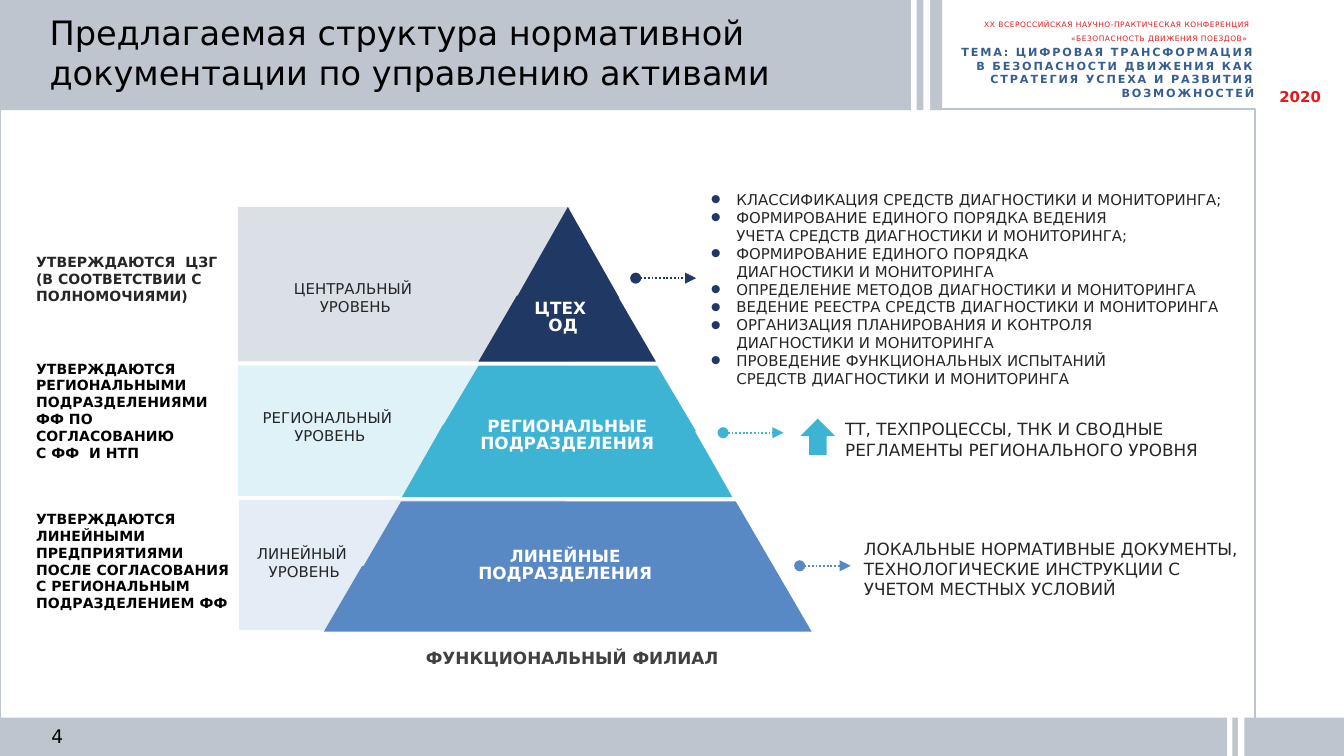
from copy import deepcopy

from lxml import etree
from pptx import Presentation
from pptx.dml.color import RGBColor
from pptx.enum.dml import MSO_LINE
from pptx.enum.shapes import MSO_CONNECTOR, MSO_SHAPE
from pptx.enum.text import MSO_ANCHOR, MSO_AUTO_SIZE, PP_ALIGN
from pptx.oxml.ns import qn
from pptx.util import Inches, Pt

RECTANGLE, ROUNDED = MSO_SHAPE.RECTANGLE, MSO_SHAPE.ROUNDED_RECTANGLE
TRAPEZOID = MSO_SHAPE.TRAPEZOID
RIGHT_ARROW = MSO_SHAPE.RIGHT_ARROW
STRAIGHT = MSO_CONNECTOR.STRAIGHT
DOTTED = MSO_LINE.ROUND_DOT
LEFT, CENTER, RIGHT = PP_ALIGN.LEFT, PP_ALIGN.CENTER, PP_ALIGN.RIGHT
TOP, MIDDLE = MSO_ANCHOR.TOP, MSO_ANCHOR.MIDDLE
FIT_SHAPE = MSO_AUTO_SIZE.SHAPE_TO_FIT_TEXT

FONT = "DejaVu Sans"
COLORS = {
    "frame": "BFC5CE", "white": "FFFFFF", "black": "000000",
    "text": "262626", "caption": "404040", "red": "E21A1A", "theme": "365F91",
    "central": "203864", "regional": "3EB4D4", "linear": "5889C4",
}

# The slide is a grid of square cells, 100 columns by 56.25 rows
CELL = Inches(0.1)
COLUMNS, ROWS = 100, 56.25

# Each pyramid level: pale band, two tiers (box, slope), arrow, plate, three texts
LEVELS = [
    {"color": "central", "band": (17.7, 15.4, 24.7, 11.5),
     "tiers": [((38.4, 15.4, 7.7, 6.8), 0.583), ((35.6, 22, 13.2, 4.9), 0.583)],
     "arrow": (47.3, 51.8, 20.7), "plate": None,
     "unit": ("ЦТЕХ \nОД", (36.5, 21.9, 10.8, 4.2)),
     "name": ("ЦЕНТРАЛЬНЫЙ ", (16.9, 20.3, 19.1, 3.9)),
     "approval": (["УТВЕРЖДАЮТСЯ  ЦЗГ", "(В СООТВЕТСТВИИ С ПОЛНОМОЧИЯМИ)"],
                  (1.7, 18.4, 15.6, 4.8), "text")},
    {"color": "regional", "band": (17.7, 27.2, 24.3, 9.7),
     "tiers": [((32.7, 27.2, 19.1, 4.9), 0.594), ((29.9, 31.6, 24.6, 5.4), 0.568)],
     "arrow": (53.8, 58.3, 32.2), "plate": (34.5, 30.7, 15.3, 4.3),
     "unit": ("РЕГИОНАЛЬНЫЕ ПОДРАЗДЕЛЕНИЯ", (33.6, 30.7, 17.2, 3.8)),
     "name": ("РЕГИОНАЛЬНЫЙ ", (16.9, 29.9, 15.3, 3.9)),
     "approval": (["УТВЕРЖДАЮТСЯ РЕГИОНАЛЬНЫМИ ПОДРАЗДЕЛЕНИЯМИ ФФ ПО "
                   "СОГЛАСОВАНИЮ \nС ФФ  И НТП"], (1.7, 26.3, 15.9, 8.6), "black")},
    {"color": "linear", "band": (17.8, 37.2, 24.3, 9.7),
     "tiers": [((27, 37.3, 30.6, 4.9), 0.583), ((24.1, 42.1, 36.3, 4.9), 0.583)],
     "arrow": (59.5, 63.3, 42.1), "plate": (34.5, 40.4, 15.3, 4.3),
     "unit": ("ЛИНЕЙНЫЕ ПОДРАЗДЕЛЕНИЯ", (32.5, 40.4, 19.1, 4)),
     "name": ("ЛИНЕЙНЫЙ ", (16.5, 40, 12.3, 3.9)),
     "approval": (["УТВЕРЖДАЮТСЯ ЛИНЕЙНЫМИ ПРЕДПРИЯТИЯМИ ПОСЛЕ СОГЛАСОВАНИЯ "
                   "С РЕГИОНАЛЬНЫМ ПОДРАЗДЕЛЕНИЕМ ФФ"], (1.7, 37.5, 17.1, 8.6), "black")},
]

CENTRAL_TASKS = [
    "КЛАССИФИКАЦИЯ СРЕДСТВ ДИАГНОСТИКИ И МОНИТОРИНГА;",
    "ФОРМИРОВАНИЕ ЕДИНОГО ПОРЯДКА ВЕДЕНИЯ \nУЧЕТА СРЕДСТВ ДИАГНОСТИКИ И МОНИТОРИНГА;",
    "ФОРМИРОВАНИЕ ЕДИНОГО ПОРЯДКА \nДИАГНОСТИКИ И МОНИТОРИНГА",
    "ОПРЕДЕЛЕНИЕ МЕТОДОВ ДИАГНОСТИКИ И МОНИТОРИНГА",
    "ВЕДЕНИЕ РЕЕСТРА СРЕДСТВ ДИАГНОСТИКИ И МОНИТОРИНГА",
    "ОРГАНИЗАЦИЯ ПЛАНИРОВАНИЯ И КОНТРОЛЯ \nДИАГНОСТИКИ И МОНИТОРИНГА",
    "ПРОВЕДЕНИЕ ФУНКЦИОНАЛЬНЫХ ИСПЫТАНИЙ \nСРЕДСТВ ДИАГНОСТИКИ И МОНИТОРИНГА",
]


def grid(*cells):
    return [round(cell * CELL) for cell in cells]


def rgb(name):
    return RGBColor.from_string(COLORS[name])


def add_block(slide, box, fill=None, kind=RECTANGLE, line=None, opacity=None):
    shape = slide.shapes.add_shape(kind, *grid(*box))
    shape.shadow.inherit = False
    if fill:
        shape.fill.solid()
        shape.fill.fore_color.rgb = rgb(fill)
    else:
        shape.fill.background()
    if line:
        shape.line.color.rgb = rgb(line)
        shape.line.width = Pt(1)
    else:
        shape.line.fill.background()
    if opacity:
        color = shape._element.spPr.find(".//" + qn("a:srgbClr"))
        etree.SubElement(color, qn("a:alpha"), val=str(opacity * 1000))
    return shape


def add_bullet(paragraph, color):
    properties = paragraph._p.get_or_add_pPr()
    indent = Inches(0.19)
    properties.set("marL", str(indent))
    properties.set("indent", str(-indent))
    bullet_color = etree.SubElement(properties, qn("a:buClr"))
    etree.SubElement(bullet_color, qn("a:srgbClr"), val=COLORS[color])
    etree.SubElement(properties, qn("a:buSzPct"), val="200000")
    etree.SubElement(properties, qn("a:buFont"), typeface="Arial")
    etree.SubElement(properties, qn("a:buChar"), char="•")


def add_text(slide, text, box, size=9, color="text", bold=False, align=LEFT,
             anchor=TOP, line=None, tracking=None, bullet=None, wrap=True, margins=True):
    """Add a text box; text is one string or a list of paragraphs."""
    frame = slide.shapes.add_textbox(*grid(*box)).text_frame
    frame.word_wrap = wrap
    frame.auto_size = FIT_SHAPE
    frame.vertical_anchor = anchor
    if not margins:
        frame.margin_left = frame.margin_right = frame.margin_top = frame.margin_bottom = 0
    paragraphs = [text] if isinstance(text, str) else text
    for index, content in enumerate(paragraphs):
        paragraph = frame.add_paragraph() if index else frame.paragraphs[0]
        paragraph.text = content
        paragraph.alignment = align
        if line:
            paragraph.line_spacing = Pt(line)
        if bullet:
            add_bullet(paragraph, bullet)
        for run in paragraph.runs:
            run.font.name = FONT
            run.font.size = Pt(size)
            run.font.bold = bold
            run.font.color.rgb = rgb(color)
            if tracking:
                run._r.get_or_add_rPr().set("spc", str(round(tracking * 100)))
        # Line breaks take the format of the text around them
        for line_break in paragraph._p.findall(qn("a:br")):
            line_break.append(deepcopy(paragraph.runs[0]._r.rPr))


def add_arrow(slide, start, end, row, color):
    connector = slide.shapes.add_connector(STRAIGHT, *grid(start, row, end, row))
    connector.line.color.rgb = rgb(color)
    connector.line.width = Pt(1)
    connector.line.dash_style = DOTTED
    line = connector.line._get_or_add_ln()
    etree.SubElement(line, qn("a:headEnd"), type="oval")
    etree.SubElement(line, qn("a:tailEnd"), type="triangle")
    etree.SubElement(connector._element.spPr, qn("a:effectLst"))


def add_frame(slide):
    add_block(slide, (0, 8.1, 93.4, 48), line="frame")
    add_block(slide, (0, 0, 70.1, 8.2), "frame")
    add_block(slide, (0, 53.4, COLUMNS, ROWS - 53.4), "frame")
    # Paired white stripes across the header and the footer
    for left, top, width, height in [(68.7, -0.1, 0.5, 8.4), (67.8, -0.1, 0.4, 8.4),
                                     (92.1, 53, 0.5, 3.5), (91.3, 53, 0.4, 3.5)]:
        add_block(slide, (left, top, width, height), "white")
    add_text(slide, "4", (2.2, 53.9, 2.5, 1.7), size=10, color="black", align=RIGHT,
             anchor=MIDDLE, margins=False)
    add_text(slide, "ТЕМА: ЦИФРОВАЯ ТРАНСФОРМАЦИЯ\nВ БЕЗОПАСНОСТИ ДВИЖЕНИЯ КАК "
             "СТРАТЕГИЯ УСПЕХА И РАЗВИТИЯ ВОЗМОЖНОСТЕЙ", (69.7, 2.9, 24.6, 4),
             size=6, color="theme", bold=True, align=RIGHT, line=7.2, tracking=1)
    add_text(slide, "2020", (94.2, 6, 6.9, 2.4), size=8, color="red", bold=True)
    add_text(slide, "XX ВСЕРОССИЙСКАЯ НАУЧНО-ПРАКТИЧЕСКАЯ КОНФЕРЕНЦИЯ "
             "«БЕЗОПАСНОСТЬ ДВИЖЕНИЯ ПОЕЗДОВ» ", (70.2, 0.7, 23.8, 2.8),
             size=4, color="red", align=RIGHT, line=7.2, tracking=0.3)
    add_text(slide, "Предлагаемая структура нормативной документации по управлению активами",
             (2.7, 0.4, 64.9, 7.1), size=18, color="black")


def add_level(slide, level):
    color = level["color"]
    add_block(slide, level["band"], color, opacity=16)
    for box, slope in level["tiers"]:
        add_block(slide, box, color, TRAPEZOID).adjustments[0] = slope
    add_arrow(slide, *level["arrow"], color)
    if level["plate"]:
        add_block(slide, level["plate"], color, ROUNDED)
    unit, unit_box = level["unit"]
    add_text(slide, unit, unit_box, color="white", bold=True, align=CENTER, line=9)
    name, name_box = level["name"]
    add_text(slide, [name, "УРОВЕНЬ"], name_box, size=8, align=CENTER)
    approval, approval_box, approval_color = level["approval"]
    add_text(slide, approval, approval_box, size=7.5, color=approval_color, bold=True)


def add_documents(slide):
    add_text(slide, CENTRAL_TASKS, (51.9, 13.7, 41.6, 15.8), size=8, bullet="central")
    add_block(slide, (59.5, 31.2, 2.7, 2.6), "regional", RIGHT_ARROW).rotation = 270
    add_text(slide, "ТТ, ТЕХПРОЦЕССЫ, ТНК И СВОДНЫЕ РЕГЛАМЕНТЫ РЕГИОНАЛЬНОГО УРОВНЯ",
             (61.9, 30.7, 34.1, 4))
    add_text(slide, "ЛОКАЛЬНЫЕ НОРМАТИВНЫЕ ДОКУМЕНТЫ, ТЕХНОЛОГИЧЕСКИЕ ИНСТРУКЦИИ С "
             "УЧЕТОМ МЕСТНЫХ УСЛОВИЙ", (63.3, 39.6, 30.2, 5.6))


def main():
    presentation = Presentation()
    presentation.slide_width, presentation.slide_height = grid(COLUMNS, ROWS)
    slide = presentation.slides.add_slide(presentation.slide_layouts[6])
    add_frame(slide)
    for level in LEVELS:
        add_level(slide, level)
    add_documents(slide)
    add_text(slide, "ФУНКЦИОНАЛЬНЫЙ ФИЛИАЛ", (30.7, 47.7, 23.8, 2.5),
             color="caption", bold=True, wrap=False)
    presentation.save("out.pptx")


if __name__ == "__main__":
    main()
